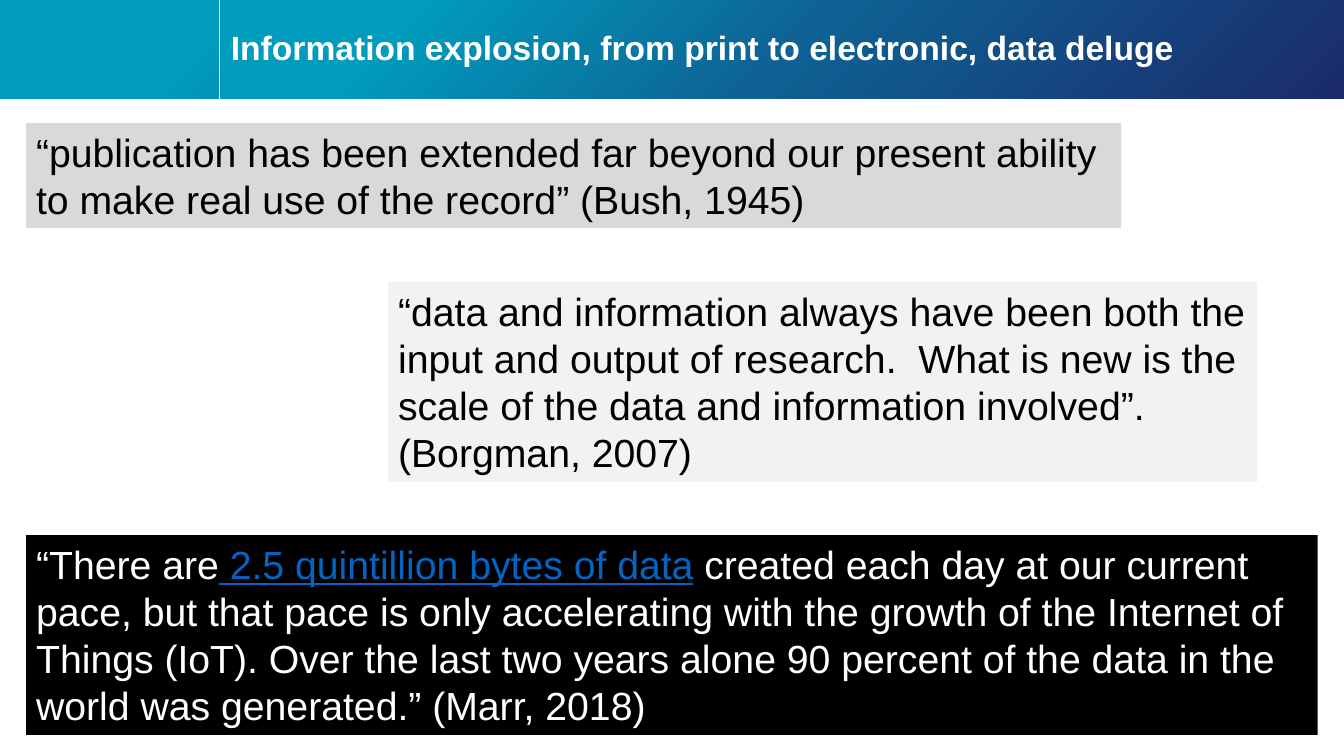
import dataclasses

import lxml.etree
import pptx
import pptx.dml.color
import pptx.enum.shapes
import pptx.enum.text
import pptx.oxml
import pptx.oxml.ns
import pptx.util

WIDTH, HEIGHT = 13.33, 7.5
BANNER_HEIGHT = 0.98
DIVIDER_X = 2.18
MARGIN = 0.26


@dataclasses.dataclass(frozen=True)
class Theme:
    font: str = "Arial"
    title_size: int = 24
    quote_size: int = 28
    light: str = "FFFFFF"
    dark: str = "000000"
    grey: str = "D9D9D9"
    pale: str = "F2F2F2"
    link: str = "0563C1"
    banner: tuple = ((17, "009BBD"), (50, "0E6394"), (100, "1B2A6B"))


THEME = Theme()


def rgb(value):
    return pptx.dml.color.RGBColor.from_string(value)


def inches(*lengths):
    return [pptx.util.Inches(length) for length in lengths]


def add_text(paragraph, text, *, size, color, bold=False, underline=False):
    run = paragraph.add_run()
    run.text = text
    run.font.name = THEME.font
    run.font.size = pptx.util.Pt(size)
    run.font.color.rgb = rgb(color)
    run.font.bold = bold
    run.font.underline = underline


def add_panel(slide, left, top, width, height):
    panel = slide.shapes.add_shape(
        pptx.enum.shapes.MSO_SHAPE.RECTANGLE, *inches(left, top, width, height))
    panel.shadow.inherit = False
    panel.line.fill.background()
    return panel


def add_gradient_band(slide, left, width):
    band = add_panel(slide, left, 0, width, BANNER_HEIGHT)
    stops = "".join(
        f'<a:gs pos="{share * 1000}"><a:srgbClr val="{color}"/></a:gs>'
        for share, color in THEME.banner)
    gradient = pptx.oxml.parse_xml(
        f'<a:gradFill {pptx.oxml.ns.nsdecls("a")} rotWithShape="1">'
        f'<a:gsLst>{stops}</a:gsLst><a:lin ang="2700000" scaled="0"/></a:gradFill>')
    geometry = band._element.spPr.find(pptx.oxml.ns.qn("a:prstGeom"))
    geometry.addnext(gradient)


def add_divider(slide):
    divider = slide.shapes.add_connector(
        pptx.enum.shapes.MSO_CONNECTOR.STRAIGHT,
        *inches(DIVIDER_X, 0, DIVIDER_X, BANNER_HEIGHT))
    divider.line.color.rgb = rgb(THEME.light)
    divider.line.width = pptx.util.Pt(0.5)
    lxml.etree.SubElement(divider._element.spPr, pptx.oxml.ns.qn("a:effectLst"))


def set_title(slide, text):
    title = slide.shapes.title
    title.left, title.top, title.width, title.height = inches(
        DIVIDER_X + 0.01, 0.11, WIDTH - DIVIDER_X - 0.01, 0.76)
    frame = title.text_frame
    frame.vertical_anchor = pptx.enum.text.MSO_ANCHOR.MIDDLE
    frame.auto_size = pptx.enum.text.MSO_AUTO_SIZE.NONE
    paragraph = frame.paragraphs[0]
    paragraph.alignment = pptx.enum.text.PP_ALIGN.LEFT
    paragraph.line_spacing = 0.9
    add_text(paragraph, text, size=THEME.title_size, color=THEME.light, bold=True)
    # Bring the title in front of the banner
    slide.shapes._spTree.append(title._element)


def add_quote(slide, left, top, width, lines, fill, parts):
    """Each part is a text with the format that sets it apart."""
    quote = add_panel(slide, left, top, width, 0.1 + 0.47 * lines)
    quote.fill.solid()
    quote.fill.fore_color.rgb = rgb(fill)
    frame = quote.text_frame
    frame.word_wrap = True
    frame.auto_size = pptx.enum.text.MSO_AUTO_SIZE.SHAPE_TO_FIT_TEXT
    frame.vertical_anchor = pptx.enum.text.MSO_ANCHOR.TOP
    paragraph = frame.paragraphs[0]
    paragraph.alignment = pptx.enum.text.PP_ALIGN.LEFT
    for text, style in parts:
        add_text(paragraph, text, size=THEME.quote_size, **style)


def main():
    deck = pptx.Presentation()
    deck.slide_width, deck.slide_height = inches(WIDTH, HEIGHT)
    slide = deck.slides.add_slide(deck.slide_layouts.get_by_name("Title Only"))

    # Banner
    add_gradient_band(slide, 0, WIDTH)
    add_gradient_band(slide, DIVIDER_X + 0.01, WIDTH - DIVIDER_X - 0.01)
    add_divider(slide)
    set_title(slide, "Information explosion, from print to electronic, data deluge")

    # Quotes, oldest first
    on_light = {"color": THEME.dark}
    on_dark = {"color": THEME.light}
    linked = {"color": THEME.link, "underline": True}
    add_quote(slide, MARGIN, 1.22, 10.86, 2, THEME.grey, [
        ("“publication has been extended far beyond our present ability to make "
         "real use of the record” (Bush, 1945)", on_light)])
    add_quote(slide, 3.85, 2.8, 8.62, 4, THEME.pale, [
        ("“data and information always have been both the input and output of "
         "research.  What is new is the scale of the data and information "
         "involved”.  (Borgman, 2007)", on_light)])
    add_quote(slide, MARGIN, 5.31, WIDTH - 2 * MARGIN, 4, THEME.dark, [
        ("“There are", on_dark),
        (" 2.5 quintillion bytes of data", linked),
        (" created each day at our current pace, but that pace is only "
         "accelerating with the growth of the Internet of Things (IoT). Over the "
         "last two years alone 90 percent of the data in the world was "
         "generated.” (Marr, 2018)", on_dark)])

    deck.save("out.pptx")


if __name__ == "__main__":
    main()
